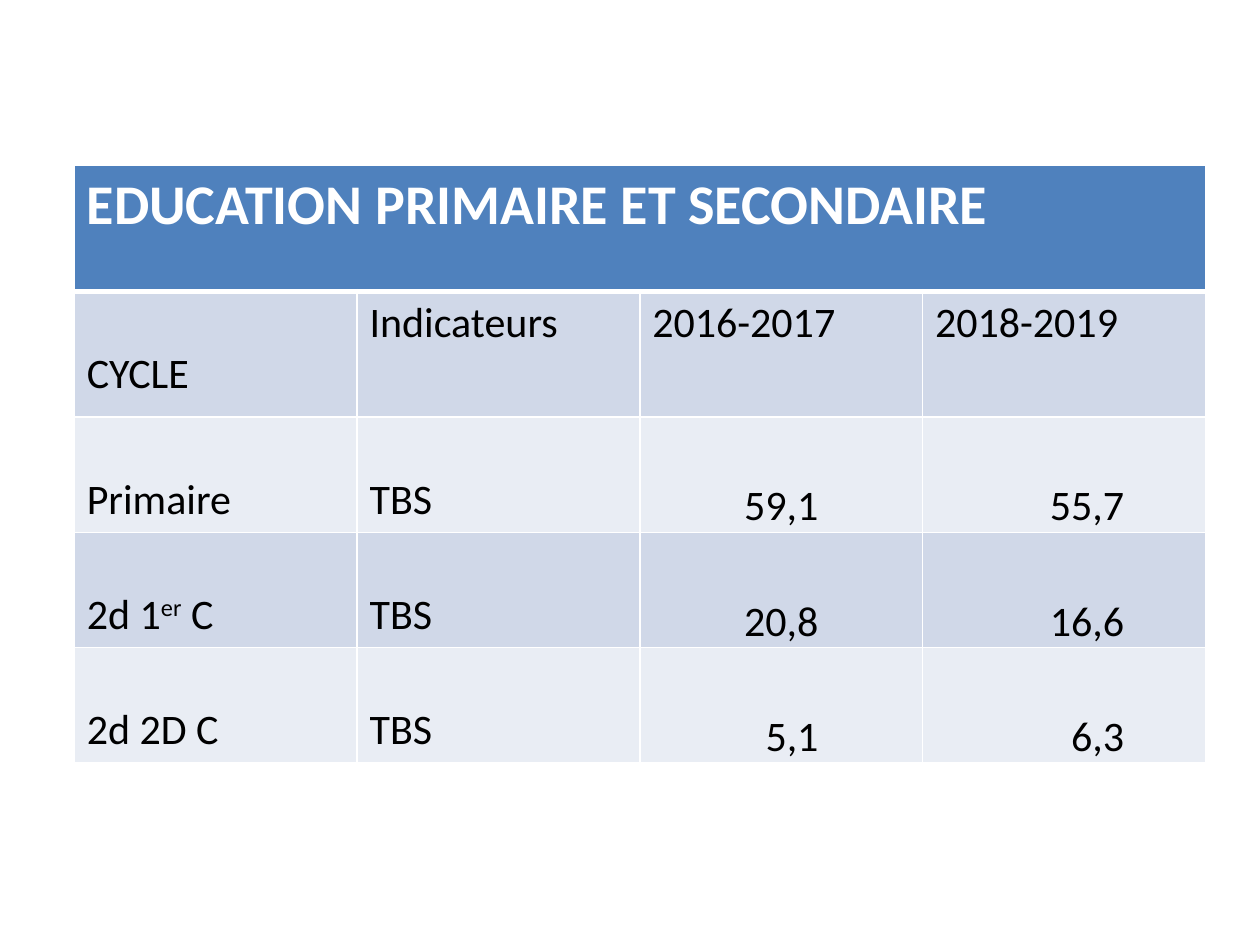
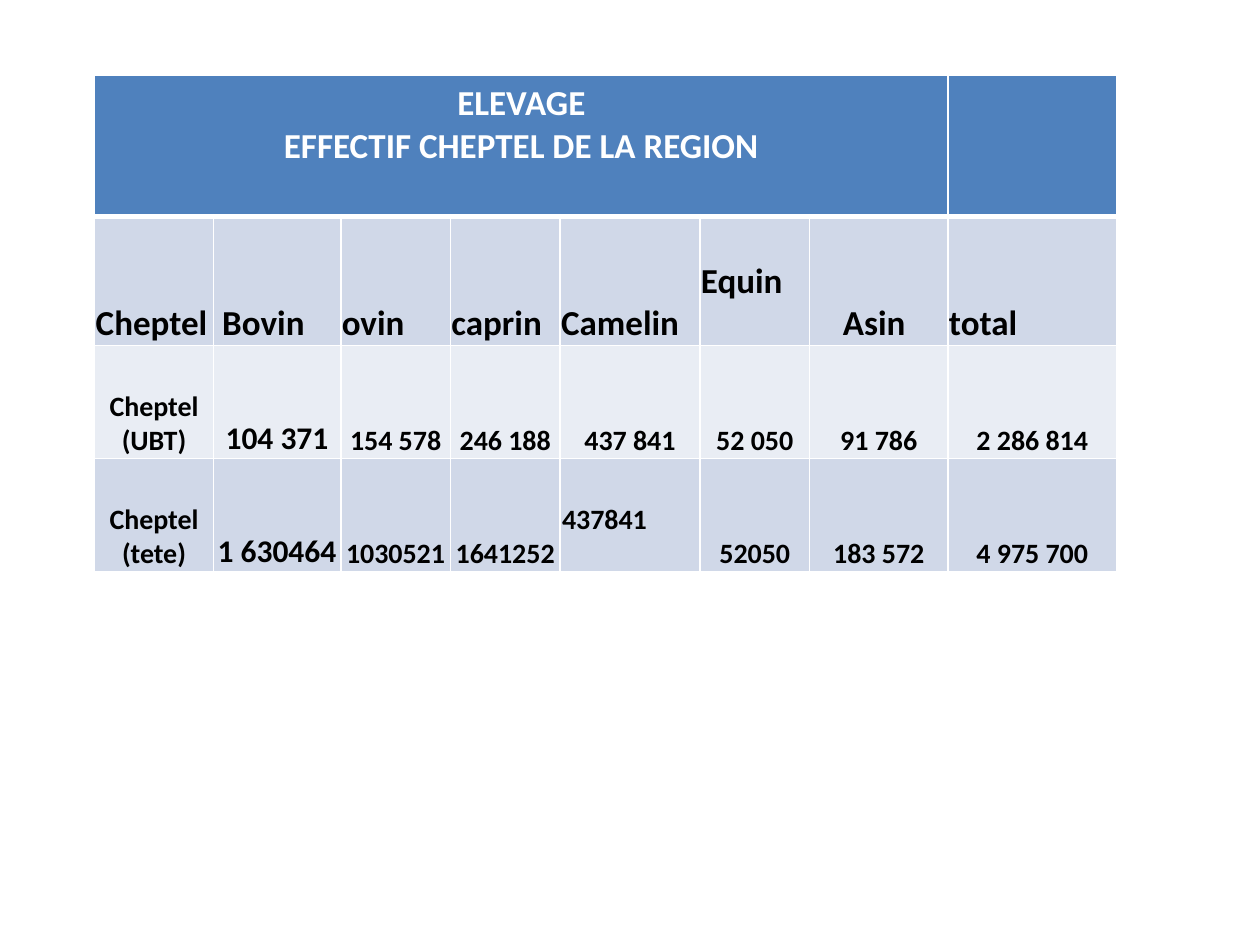
from dataclasses import dataclass

from lxml.etree import SubElement
from pptx import Presentation
from pptx.dml.color import RGBColor
from pptx.enum.text import MSO_ANCHOR, PP_ALIGN
from pptx.oxml.ns import qn
from pptx.util import Cm, Pt


@dataclass(frozen=True)
class Theme:
    font: str = "Calibri"
    header: str = "4F81BD"
    bands: tuple = ("D0D8E8", "E9EDF4")
    line: str = "FFFFFF"
    light_text: str = "FFFFFF"
    dark_text: str = "000000"
    banner: int = 32
    body: int = 24
    heading: int = 20
    emphasis: int = 18
    figure: int = 16


THEME = Theme()
INSET = (0.25, 0.13, 0.25, 0.13)
TIGHT = (0.02, 0.02, 0.02, 0)
LEFT, CENTER, RIGHT = PP_ALIGN.LEFT, PP_ALIGN.CENTER, PP_ALIGN.RIGHT
TOP, BOTTOM = MSO_ANCHOR.TOP, MSO_ANCHOR.BOTTOM


def draw_borders(cell, bottom_width):
    properties = cell._tc.get_or_add_tcPr()
    for side, width in (("L", 1), ("R", 1), ("T", 1), ("B", bottom_width)):
        border = SubElement(properties, qn(f"a:ln{side}"), w=str(Pt(width)))
        fill = SubElement(border, qn("a:solidFill"))
        SubElement(fill, qn("a:srgbClr"), val=THEME.line)


def add_grid(slide, left, top, widths, heights, header_span):
    grid = slide.shapes.add_table(
        len(heights), len(widths), Cm(left), Cm(top),
        Cm(sum(widths)), Cm(sum(heights)),
    ).table
    for column, width in zip(grid.columns, widths):
        column.width = Cm(width)
    for index, (row, height) in enumerate(zip(grid.rows, heights)):
        row.height = Cm(height)
        color = THEME.bands[(index - 1) % 2] if index else THEME.header
        for cell in row.cells:
            draw_borders(cell, 1 if index else 3)
            cell.fill.solid()
            cell.fill.fore_color.rgb = RGBColor.from_string(color)
    grid.cell(0, 0).merge(grid.cell(0, header_span - 1))
    return grid


def add_run(paragraph, text, size, bold, color, baseline=0):
    run = paragraph.add_run()
    run.text = text
    run.font.name = THEME.font
    run.font.size = Pt(size)
    run.font.bold = bold
    run.font.color.rgb = RGBColor.from_string(color)
    if baseline:
        run._r.get_or_add_rPr().set("baseline", str(baseline * 1000))


def write_cell(cell, lines, size, bold=False, color=THEME.dark_text,
               align=LEFT, anchor=TOP, inset=INSET):
    cell.margin_left, cell.margin_top, cell.margin_right, cell.margin_bottom = map(Cm, inset)
    cell.vertical_anchor = anchor
    frame = cell.text_frame
    for index, line in enumerate(lines):
        paragraph = frame.paragraphs[0] if index == 0 else frame.add_paragraph()
        paragraph.alignment = align
        for text, baseline in line:
            add_run(paragraph, text, size, bold, color, baseline)


def plain(*texts):
    return [[(text, 0)] for text in texts]


def build_education(slide):
    grid = add_grid(slide, 1.5, 3.33, [5.7] * 4, [2.54] * 2 + [2.32] * 3, 4)
    write_cell(grid.cell(0, 0), plain("EDUCATION PRIMAIRE ET SECONDAIRE"),
               THEME.banner, True, THEME.light_text)
    write_cell(grid.cell(1, 0), plain("CYCLE"), THEME.body,
               anchor=BOTTOM, inset=(0.25, 0.13, 0.25, 0.34))
    for column, heading in enumerate(("Indicateurs", "2016-2017", "2018-2019"), 1):
        write_cell(grid.cell(1, column), plain(heading), THEME.body)

    cycles = [
        (plain("Primaire"), "59,1", "55,7"),
        ([[("2d 1", 0), ("er", 30), (" C", 0)]], "20,8", "16,6"),
        (plain("2d 2D C"), "5,1", "6,3"),
    ]
    for row, (cycle, *rates) in enumerate(cycles, 2):
        write_cell(grid.cell(row, 0), cycle, THEME.body, anchor=BOTTOM)
        write_cell(grid.cell(row, 1), plain("TBS"), THEME.body, anchor=BOTTOM)
        for column, (rate, right_inset) in enumerate(zip(rates, (2.1, 1.64)), 2):
            write_cell(grid.cell(row, column), plain(rate), THEME.body, align=RIGHT,
                       anchor=BOTTOM, inset=(0.02, 0.02, right_inset, 0))


def build_livestock(slide):
    widths = [2.39, 2.57, 2.21, 2.21, 2.82, 2.21, 2.79, 3.4]
    grid = add_grid(slide, 1.91, 1.52, widths, [2.84, 2.6, 2.28, 2.28], 7)
    write_cell(grid.cell(0, 0), plain("ELEVAGE", "EFFECTIF CHEPTEL DE LA REGION"),
               THEME.heading, True, THEME.light_text, CENTER)

    species = ["Cheptel", "Bovin", "ovin", "caprin", "Camelin", "Equin", "Asin", "total"]
    heading_insets = {
        "Bovin": (0.18, 0.02, 0.02, 0),
        "Equin": (0.02, 0.02, 0.02, 0.86),
        "Asin": (0.67, 0.02, 0.02, 0),
    }
    for column, name in enumerate(species):
        write_cell(grid.cell(1, column), plain(name), THEME.heading, True,
                   anchor=BOTTOM, inset=heading_insets.get(name, TIGHT))

    counts = [
        ["Cheptel (UBT)", "104 371", "154 578", "246 188", "437 841", "52 050",
         "91 786", "2 286 814"],
        ["Cheptel (tete)", "1 630464", "1030521", "1641252", "437841", "52050",
         "183 572", "4 975 700"],
    ]
    for row, figures in enumerate(counts, 2):
        for column, figure in enumerate(figures):
            raised = figure == "437841"
            write_cell(grid.cell(row, column), plain(figure),
                       THEME.emphasis if species[column] == "Bovin" else THEME.figure,
                       True, align=LEFT if raised else CENTER, anchor=BOTTOM,
                       inset=(0.04, 0.02, 0.02, 0.69) if raised else TIGHT)


def main():
    deck = Presentation()
    deck.slide_width, deck.slide_height = Cm(25.4), Cm(19.05)
    blank = deck.slide_layouts[6]
    for build in (build_education, build_livestock):
        build(deck.slides.add_slide(blank))
    deck.save("out.pptx")


if __name__ == "__main__":
    main()
